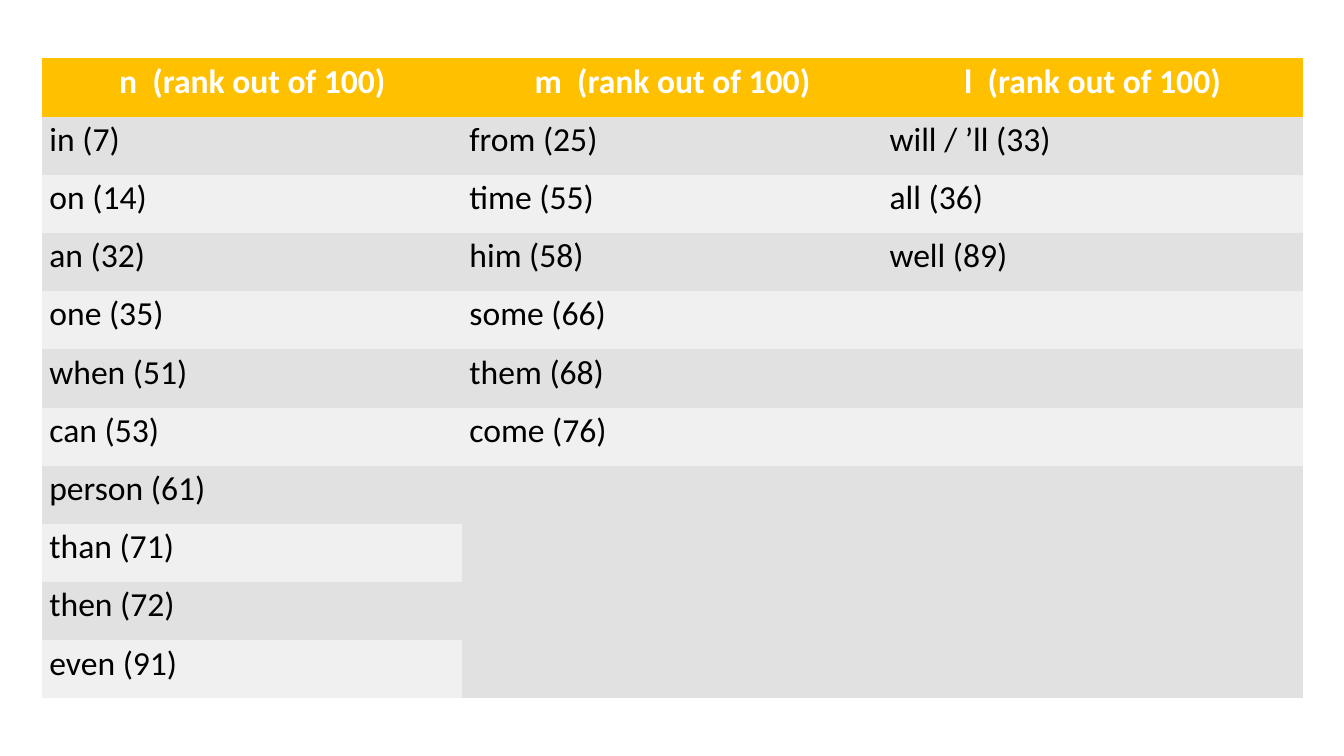
from pptx import Presentation
from pptx.dml.color import RGBColor
from pptx.enum import text
from pptx.oxml import ns
from pptx.util import Inches, Pt

# Content: one list of ranked words per final consonant
WORDS = {
    "n": ["in (7)", "on (14)", "an (32)", "one (35)", "when (51)", "can (53)",
          "person (61)", "than (71)", "then (72)", "even (91)"],
    "m": ["from (25)", "time (55)", "him (58)", "some (66)", "them (68)",
          "come (76)"],
    "l": ["will / ’ll (33)", "all (36)", "well (89)"],
}
HEADING = "{}  (rank out of 100)"
HEADER_FILL, BANDS = "FFC000", ("F0F0F0", "E1E1E1")
LEFT, TOP, WIDTH, HEIGHT = 0.42, 0.58, 12.5, 6.35
NO_STYLE_NO_GRID = "{2D5ABB26-0587-4C30-8999-92F81FD0307C}"


def color(value):
    return RGBColor.from_string(value)


def write(cell, words, is_header):
    cell.margin_left = cell.margin_right = Inches(0.07)
    cell.margin_top = cell.margin_bottom = 0
    para = cell.text_frame.paragraphs[0]
    para.alignment = text.PP_ALIGN.CENTER if is_header else text.PP_ALIGN.LEFT
    para.line_spacing = 1.07
    para.space_after = Pt(8)
    span = para.add_run()
    span.text = words
    span.font.name = "Calibri"
    span.font.size = Pt(24)
    span.font.bold = is_header
    span.font.color.rgb = color("FFFFFF" if is_header else "000000")


def main():
    deck = Presentation()
    deck.slide_width, deck.slide_height = Inches(13.33), Inches(7.5)
    page = deck.slides.add_slide(deck.slide_layouts[6])

    # Table frame without style borders
    columns = [[HEADING.format(sound), *words] for sound, words in WORDS.items()]
    row_count = max(len(column) for column in columns)
    frame = page.shapes.add_table(row_count, len(columns), Inches(LEFT),
                                  Inches(TOP), Inches(WIDTH), Inches(HEIGHT))
    table = frame.table
    table.first_row = table.horz_banding = False
    next(frame.element.iter(ns.qn("a:tableStyleId"))).text = NO_STYLE_NO_GRID
    for row in table.rows:
        row.height = Inches(HEIGHT / row_count)

    # Fills and words
    for col, entries in enumerate(columns):
        for row in range(row_count):
            cell = table.cell(row, col)
            cell.fill.solid()
            cell.fill.fore_color.rgb = color(BANDS[row % 2] if row else HEADER_FILL)
            if row < len(entries):
                write(cell, entries[row], row == 0)

    # One empty block below the m and l words
    table.cell(len(columns[1]), 1).merge(table.cell(row_count - 1, 2))

    deck.save("out.pptx")


if __name__ == "__main__":
    main()
